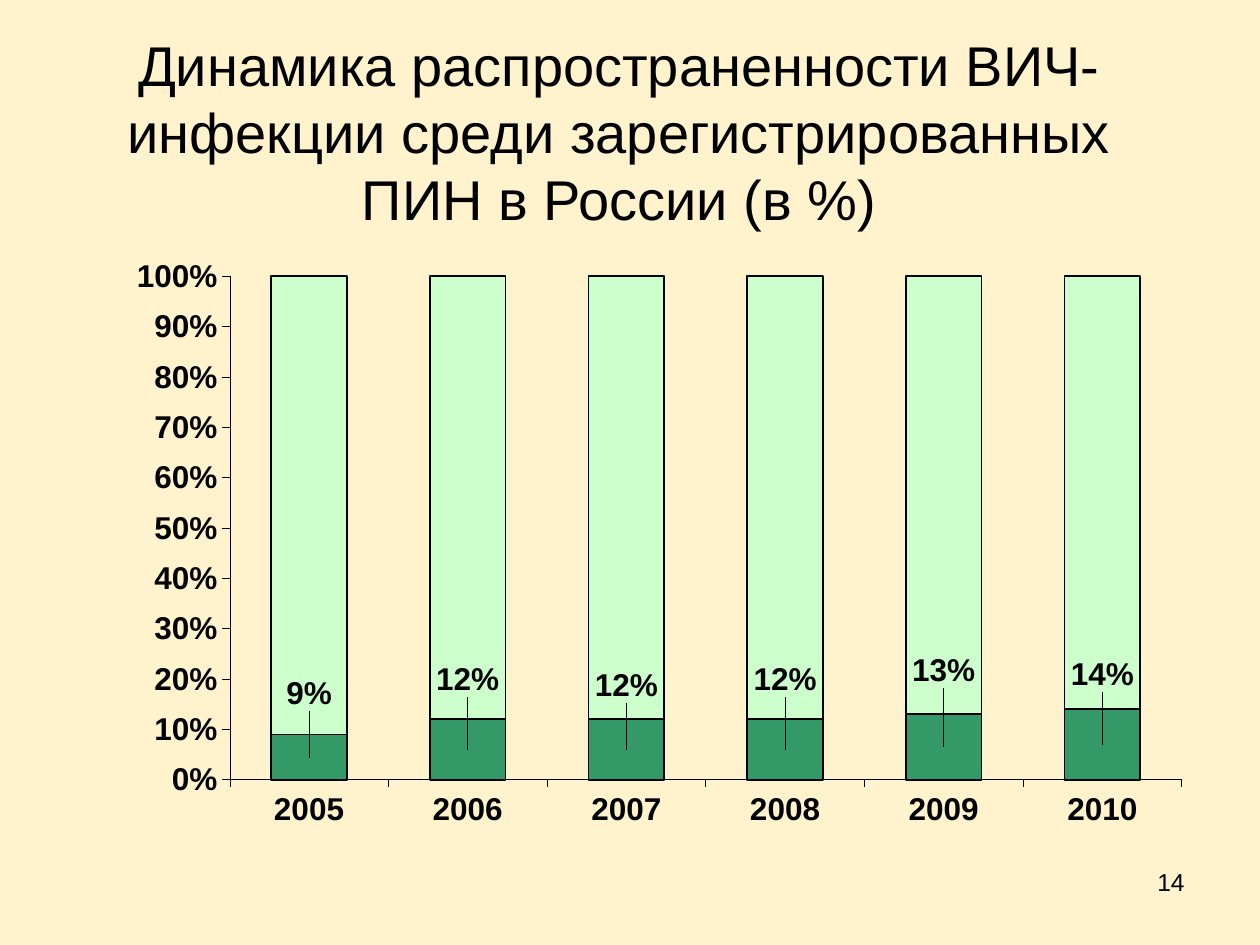
from lxml import etree
from pptx import Presentation
from pptx.chart.data import CategoryChartData
from pptx.dml.color import RGBColor
from pptx.enum.chart import XL_CHART_TYPE, XL_LABEL_POSITION, XL_TICK_MARK
from pptx.enum.text import MSO_ANCHOR, MSO_AUTO_SIZE, PP_ALIGN
from pptx.oxml.ns import qn
from pptx.util import Cm, Pt

STACKED_100 = XL_CHART_TYPE.COLUMN_STACKED_100
LABEL_CENTER = XL_LABEL_POSITION.CENTER
TICK_OUT = XL_TICK_MARK.OUTSIDE
TICK_NONE = XL_TICK_MARK.NONE
MIDDLE = MSO_ANCHOR.MIDDLE
NO_AUTOFIT = MSO_AUTO_SIZE.NONE
CENTER = PP_ALIGN.CENTER
RIGHT = PP_ALIGN.RIGHT

CREAM = RGBColor(0xFF, 0xF3, 0xCD)
BLACK = RGBColor(0x00, 0x00, 0x00)
GREEN = RGBColor(0x33, 0x99, 0x66)
MINT = RGBColor(0xCC, 0xFF, 0xCC)

YEARS = ["2005", "2006", "2007", "2008", "2009", "2010"]
INFECTED = [0.09, 0.12, 0.12, 0.12, 0.13, 0.14]
LABEL_SHIFTS = [-0.10, -0.11, -0.10, -0.11, -0.12, -0.11]


class SlideBuilder:
    font_name = "Arial"

    def __init__(self, slide):
        self.slide = slide
        slide.background.fill.solid()
        slide.background.fill.fore_color.rgb = CREAM

    def style_font(self, font, size, bold=False):
        font.name = self.font_name
        font.size = Pt(size)
        font.bold = bold
        font.color.rgb = BLACK

    def style_line(self, line, width):
        line.color.rgb = BLACK
        line.width = Pt(width)

    def fill_text(self, frame, text, size, align):
        frame.text = text
        frame.word_wrap = True
        paragraph = frame.paragraphs[0]
        paragraph.alignment = align
        self.style_font(paragraph.runs[0].font, size)

    def title(self, text, left, top, width, height):
        heading = self.slide.shapes.title
        heading.left, heading.top = left, top
        heading.width, heading.height = width, height
        self.fill_text(heading.text_frame, text, 32, CENTER)
        heading.text_frame.vertical_anchor = MIDDLE
        heading.text_frame.auto_size = NO_AUTOFIT

    def page_number(self, text, left, top, width, height):
        number = self.slide.shapes.add_textbox(left, top, width, height)
        self.fill_text(number.text_frame, text, 14, RIGHT)

    def place(self, parent, index, **settings):
        """Give a chart part a manual layout."""
        for old in parent.findall(qn("c:layout")):
            parent.remove(old)
        layout = etree.Element(qn("c:layout"))
        manual = etree.SubElement(layout, qn("c:manualLayout"))
        for name, value in settings.items():
            etree.SubElement(manual, qn(f"c:{name}")).set("val", str(value))
        parent.insert(index, layout)

    def share_chart(self, left, top, width, height):
        shares = CategoryChartData(number_format="0%")
        shares.categories = YEARS
        shares.add_series("Series 1", INFECTED)
        shares.add_series("Series 2", [round(1 - share, 2) for share in INFECTED])
        chart = self.slide.shapes.add_chart(
            STACKED_100, left, top, width, height, shares).chart
        chart.has_legend = False
        chart.has_title = False
        self.style_font(chart.font, 18, True)

        # Axes
        for axis in (chart.category_axis, chart.value_axis):
            axis.has_major_gridlines = False
            axis.major_tick_mark = TICK_OUT
            axis.minor_tick_mark = TICK_NONE
            self.style_font(axis.tick_labels.font, 18, True)
            self.style_line(axis.format.line, 0.25)
        values = chart.value_axis
        values.minimum_scale, values.maximum_scale = 0, 1
        values.major_unit = 0.1
        values.tick_labels.number_format = "0%"
        values.tick_labels.number_format_is_linked = False

        # Columns
        plot = chart.plots[0]
        plot.gap_width, plot.overlap = 110, 100
        plot.vary_by_categories = False
        for series, color in zip(plot.series, (GREEN, MINT)):
            series.format.fill.solid()
            series.format.fill.fore_color.rgb = color
            self.style_line(series.format.line, 1)

        # Labels raised above the lower segments
        infected = plot.series[0]
        labels = infected.data_labels
        labels.show_value = True
        labels.number_format = "0%"
        labels.number_format_is_linked = False
        self.style_font(labels.font, 18, True)
        for index in range(len(YEARS)):
            label = infected.points[index].data_label
            label.position = LABEL_CENTER
            self.style_font(label.font, 18, True)
        chart_xml = plot._element.getparent()
        for label_xml, shift in zip(chart_xml.iter(qn("c:dLbl")), LABEL_SHIFTS):
            self.place(label_xml, 1, x=0, y=shift)

        # Plot area
        self.place(chart_xml, 0, layoutTarget="inner", xMode="edge",
                   yMode="edge", x=0.14, y=0.07, w=0.85, h=0.79)


def main():
    deck = Presentation()
    deck.slide_width, deck.slide_height = Cm(25.4), Cm(19.05)
    builder = SlideBuilder(deck.slides.add_slide(deck.slide_layouts[5]))

    builder.page_number("14", Cm(18.2), Cm(17.35), Cm(5.93), Cm(1.32))
    builder.title(
        "Динамика распространенности ВИЧ-инфекции среди "
        "зарегистрированных ПИН в России (в %)",
        Cm(1.27), Cm(0.76), Cm(22.43), Cm(3.76))
    builder.share_chart(Cm(1.47), Cm(4.67), Cm(22.58), Cm(12.85))

    deck.save("out.pptx")


if __name__ == "__main__":
    main()
